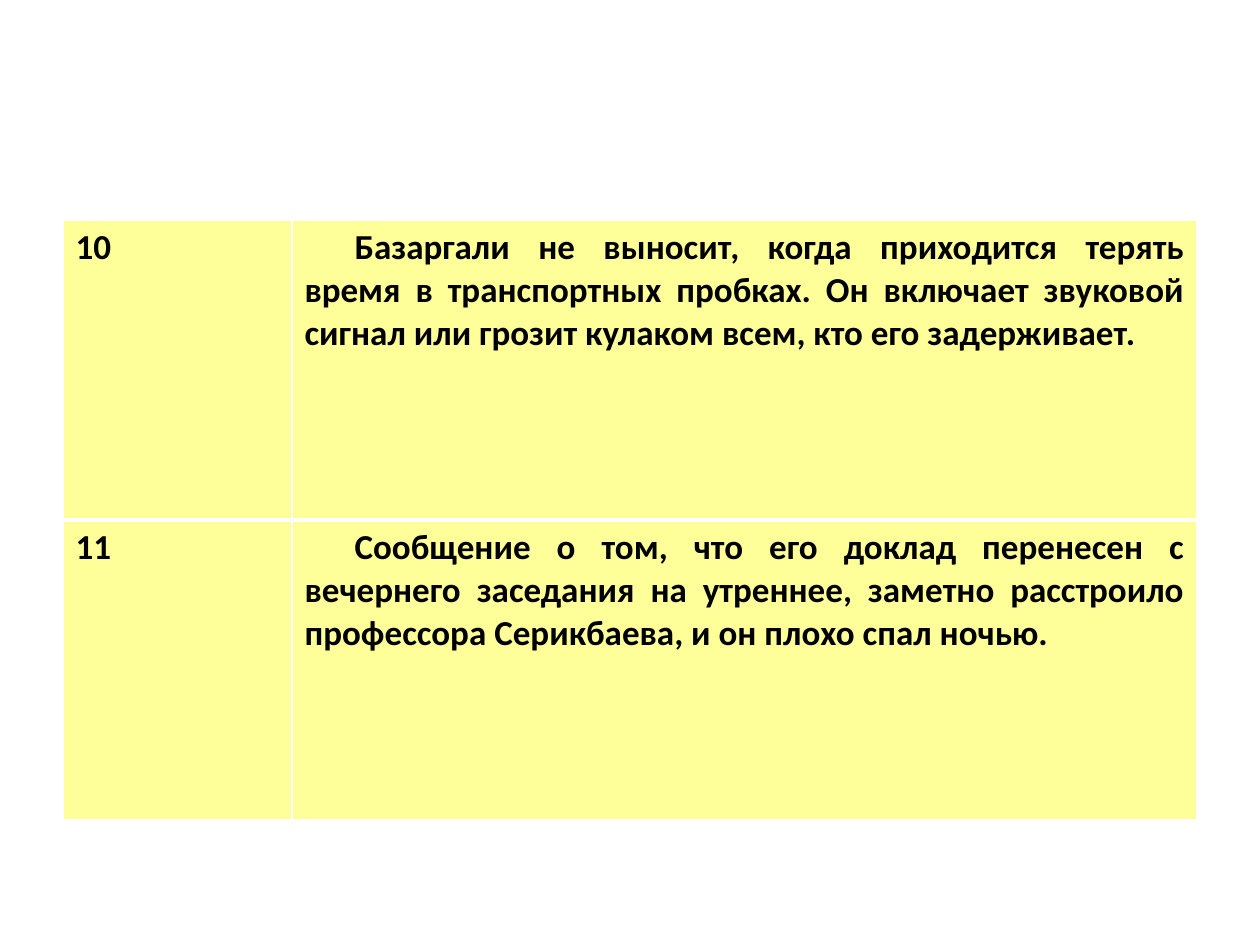
import dataclasses

import pptx
import pptx.dml.color
import pptx.enum.text
import pptx.oxml
import pptx.oxml.ns
import pptx.util

PX_PER_INCH = 126


def px(length):
    return pptx.util.Inches(length / PX_PER_INCH)


@dataclasses.dataclass(frozen=True)
class Theme:
    font: str = "Calibri"
    text_size: int = 20
    text: str = "000000"
    cell: str = "FFFF99"
    rule: str = "FFFFFF"
    thin: int = 1
    thick: int = 3


class SlideBuilder:
    def __init__(self, slide, theme):
        self.slide = slide
        self.theme = theme

    def table(self, left, top, column_widths, row_height, rows, indents):
        frame = self.slide.shapes.add_table(
            len(rows), len(column_widths), px(left), px(top),
            px(sum(column_widths)), px(row_height * len(rows)))
        grid = frame.table
        grid.first_row = grid.horz_banding = False
        for column, width in zip(grid.columns, column_widths):
            column.width = px(width)
        for r, texts in enumerate(rows):
            grid.rows[r].height = px(row_height)
            for c, text in enumerate(texts):
                # The rule between rows is thicker than the rest
                top_width = self.theme.thick if r > 0 else self.theme.thin
                bottom_width = self.theme.thick if r < len(rows) - 1 else self.theme.thin
                cell = grid.cell(r, c)
                self.borders(cell, top_width, bottom_width)
                self.cell(cell, text, indents[c])

    def borders(self, cell, top_width, bottom_width):
        properties = cell._tc.get_or_add_tcPr()
        widths = {"L": self.theme.thin, "R": self.theme.thin,
                  "T": top_width, "B": bottom_width}
        for side, width in widths.items():
            properties.append(pptx.oxml.parse_xml(
                f'<a:ln{side} {pptx.oxml.ns.nsdecls("a")} w="{pptx.util.Pt(width)}">'
                f'<a:solidFill><a:srgbClr val="{self.theme.rule}"/></a:solidFill>'
                f'</a:ln{side}>'))

    def cell(self, cell, text, indent):
        cell.fill.solid()
        cell.fill.fore_color.rgb = pptx.dml.color.RGBColor.from_string(self.theme.cell)
        cell.text = text
        paragraph = cell.text_frame.paragraphs[0]
        paragraph.alignment = pptx.enum.text.PP_ALIGN.JUSTIFY
        if indent:
            paragraph._p.get_or_add_pPr().set("indent", str(px(indent)))
        paragraph.font.name = self.theme.font
        paragraph.font.size = pptx.util.Pt(self.theme.text_size)
        paragraph.font.bold = True
        paragraph.font.color.rgb = pptx.dml.color.RGBColor.from_string(self.theme.text)


def main():
    presentation = pptx.Presentation()
    presentation.slide_width = px(1260)
    presentation.slide_height = px(945)
    slide = presentation.slides.add_slide(presentation.slide_layouts[6])
    builder = SlideBuilder(slide, Theme())

    # Numbered situations
    situations = [
        ("10", "Базаргали не выносит, когда приходится терять время в транспортных "
               "пробках. Он включает звуковой сигнал или грозит кулаком всем, "
               "кто его задерживает."),
        ("11", "Сообщение о том, что его доклад перенесен с вечернего заседания "
               "на утреннее, заметно расстроило профессора Серикбаева, "
               "и он плохо спал ночью."),
    ]
    builder.table(left=63, top=220, column_widths=(229, 905), row_height=300,
                  rows=situations, indents=(0, 50))

    presentation.save("out.pptx")


if __name__ == "__main__":
    main()
